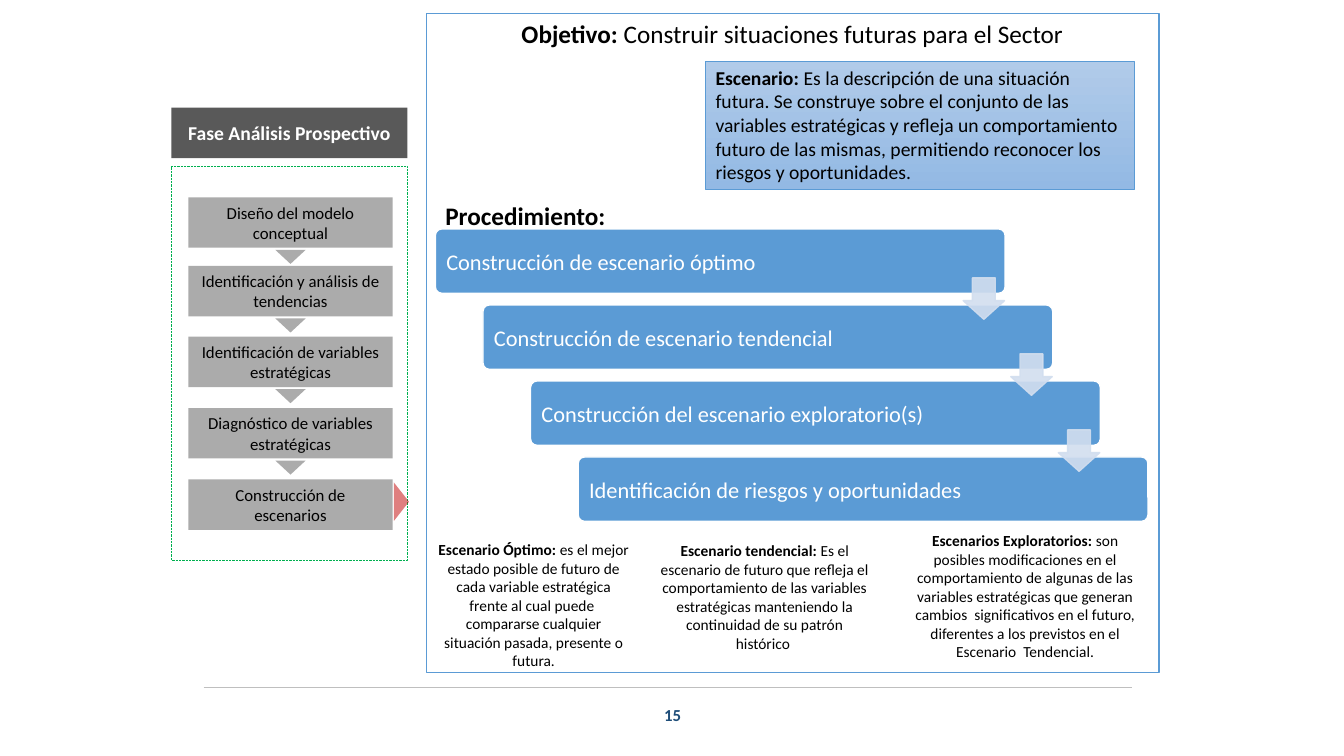
from dataclasses import dataclass

from lxml import etree
from pptx import Presentation
from pptx import util as u
from pptx.dml import color as colors
from pptx.enum import dml, shapes, text
from pptx.oxml import ns

# Content: each paragraph is a (bold, regular) pair
OBJECTIVE = ("Objetivo: ", "Construir situaciones futuras para el Sector")
PROCEDURE = ("Procedimiento:", "")
PHASE = ("Fase Análisis Prospectivo", "")
PHASE_STEPS = [  # label, top
    ("Diseño del modelo conceptual", 141),
    ("Identificación y análisis de tendencias", 190),
    ("Identificación de variables estratégicas", 240.5),
    ("Diagnóstico de variables estratégicas", 291.5),
    ("Construcción de escenarios", 342.5),
]
SCENARIO_STEPS = [
    "Construcción de escenario óptimo",
    "Construcción de escenario tendencial",
    "Construcción del escenario exploratorio(s)",
    "Identificación de riesgos y oportunidades",
]
DEFINITION = ("Escenario: ", "Es la descripción de una situación futura. Se construye sobre el "
              "conjunto de las variables estratégicas y refleja un comportamiento futuro de las "
              "mismas, permitiendo reconocer los riesgos y oportunidades.")
SCENARIO_TYPES = [  # position, paragraphs
    ((304.5, 382.5, 153.5, 101), [
        ("Escenario Óptimo: ", "es el mejor estado posible de futuro de cada variable "
         "estratégica frente al cual puede "),
        ("", "compararse cualquier situación pasada, presente o futura.")]),
    ((463, 383, 166.5, 87), [
        ("Escenario tendencial: ", "Es el escenario de futuro que refleja el comportamiento de "
         "las variables estratégicas manteniendo la continuidad de su patrón histórico ")]),
    ((644.5, 376, 175.5, 101), [
        ("Escenarios Exploratorios: ", "son posibles modiﬁcaciones en el comportamiento de "
         "algunas de las variables estratégicas que generan cambios  signiﬁcativos en el futuro, "
         "diferentes a los previstos en el Escenario  Tendencial.")]),
]
PAGE_NUMBER = ("15", "")


@dataclass(frozen=True)
class Theme:
    font: str = "Calibri"
    black: str = "000000"
    white: str = "FFFFFF"
    gray: str = "595959"
    red: str = "C00000"
    green: str = "00B050"
    blue: str = "5B9BD5"
    pale: str = "D2DEEF"
    navy: str = "1F4E79"
    rule: str = "BFBFBF"
    gradient: tuple = ("B1CBE9", "93B9E4")
    heading: int = 18
    step: int = 16
    body: int = 14
    label: int = 12
    note: int = 11


THEME = Theme()
LEFT, CENTER = text.PP_ALIGN.LEFT, text.PP_ALIGN.CENTER
TOP, MIDDLE = text.MSO_ANCHOR.TOP, text.MSO_ANCHOR.MIDDLE
KIND = shapes.MSO_SHAPE


def rgb(value):
    return colors.RGBColor.from_string(value)


def set_alpha(fill_element, percent):
    color_element = fill_element.find(".//" + ns.qn("a:srgbClr"))
    etree.SubElement(color_element, ns.qn("a:alpha")).set("val", str(percent * 1000))


def write(shape, paragraphs, size, color=THEME.black, align=CENTER, anchor=MIDDLE):
    frame = shape.text_frame
    frame.word_wrap = True
    frame.vertical_anchor = anchor
    for index, pieces in enumerate(paragraphs):
        paragraph = frame.add_paragraph() if index else frame.paragraphs[0]
        paragraph.alignment = align
        for piece, bold in zip(pieces, (True, False)):
            if piece:
                run = paragraph.add_run()
                run.text = piece
                font = run.font
                font.name, font.size, font.bold = THEME.font, u.Pt(size), bold
                font.color.rgb = rgb(color)
    return frame


def add_shape(slide, kind, box, fill=None, line=None, width=1, alpha=None):
    shape = slide.shapes.add_shape(kind, *map(u.Pt, box))
    shape.shadow.inherit = False
    if fill:
        shape.fill.solid()
        shape.fill.fore_color.rgb = rgb(fill)
        if alpha:
            set_alpha(shape._element.spPr.find(ns.qn("a:solidFill")), alpha)
    else:
        shape.fill.background()
    if line:
        shape.line.color.rgb = rgb(line)
        shape.line.width = u.Pt(width)
    else:
        shape.line.fill.background()
    return shape


def add_text(slide, box, paragraphs, size, **options):
    shape = slide.shapes.add_textbox(*map(u.Pt, box))
    return write(shape, paragraphs, size, **options)


def add_footer(slide):
    rule = slide.shapes.add_connector(shapes.MSO_CONNECTOR.STRAIGHT,
                                      u.Pt(145.5), u.Pt(491), u.Pt(808.5), u.Pt(491))
    rule.line.color.rgb = rgb(THEME.rule)
    rule.line.width = u.Pt(0.75)
    etree.SubElement(rule._element.spPr, ns.qn("a:effectLst"))
    add_text(slide, (396.5, 496, 168, 29), [PAGE_NUMBER], THEME.label,
             color=THEME.navy, anchor=MIDDLE)


def add_phase(slide):
    left, width = 122.5, 168.5
    header = add_shape(slide, KIND.RECTANGLE, (left, 77, width, 36), THEME.gray)
    write(header, [PHASE], THEME.body, THEME.white)
    frame = add_shape(slide, KIND.RECTANGLE, (left, 119, width, 281.5), None, THEME.green, 0.5)
    frame.line.dash_style = dml.MSO_LINE.ROUND_DOT

    box_left, box_width, box_height = 134.5, 146, 36
    marker_width, marker_height = 21.6, 10
    for index, (label, top) in enumerate(PHASE_STEPS):
        box = add_shape(slide, KIND.RECTANGLE, (box_left, top, box_width, box_height),
                        THEME.gray, alpha=50)
        write(box, [("", label)], THEME.label)
        if index < len(PHASE_STEPS) - 1:
            marker_left = box_left + (box_width - marker_width) / 2
            marker = add_shape(slide, KIND.ISOSCELES_TRIANGLE,
                               (marker_left, top + box_height + 1.5, marker_width, marker_height),
                               THEME.gray, alpha=50)
            marker.rotation = 180

    # Current step
    pointer = add_shape(slide, KIND.ISOSCELES_TRIANGLE, (273, 353, 27.5, 10.8),
                        THEME.red, alpha=50)
    pointer.rotation = 90


def add_staircase(slide):
    left, top, step_x, step_y = 311, 163.5, 34, 54.3
    for index, label in enumerate(SCENARIO_STEPS):
        bar = add_shape(slide, KIND.ROUNDED_RECTANGLE,
                        (left + index * step_x, top + index * step_y, 407, 46),
                        THEME.blue, THEME.white)
        bar.adjustments[0] = 0.1
        frame = write(bar, [("", label)], THEME.step, THEME.white, LEFT)
        frame.margin_left = u.Pt(6.5)
    for index in range(len(SCENARIO_STEPS) - 1):
        arrow = add_shape(slide, KIND.DOWN_ARROW,
                          (left + 377 + index * step_x, top + 35 + index * step_y, 29.6, 29.6),
                          THEME.pale, THEME.pale, alpha=90)
        arrow.adjustments[0], arrow.adjustments[1] = 0.55, 0.45
        set_alpha(arrow._element.spPr.find(ns.qn("a:ln")), 90)


def add_definition(slide):
    box = add_shape(slide, KIND.RECTANGLE, (504, 43.5, 306, 92), None, THEME.blue, 0.5)
    box.fill.gradient()
    box.fill.gradient_angle = 270
    for stop, color in zip(box.fill.gradient_stops, THEME.gradient):
        stop.color.rgb = rgb(color)
    write(box, [DEFINITION], THEME.body, align=LEFT, anchor=TOP)


def main():
    presentation = Presentation()
    presentation.slide_width, presentation.slide_height = u.Pt(960), u.Pt(540)
    slide = presentation.slides.add_slide(presentation.slide_layouts[5])

    # Title
    title = slide.shapes.title
    title.left, title.top, title.width, title.height = map(u.Pt, (312, 9.5, 508, 29))
    write(title, [OBJECTIVE], THEME.heading, anchor=TOP).auto_size = text.MSO_AUTO_SIZE.NONE

    add_footer(slide)
    add_phase(slide)

    # Procedure panel
    add_shape(slide, KIND.RECTANGLE, (304.5, 9.5, 523.5, 471), None, THEME.blue)
    add_staircase(slide)
    add_text(slide, (311, 139.5, 134, 29), [PROCEDURE], THEME.heading,
             align=LEFT, anchor=TOP).word_wrap = False
    add_definition(slide)
    for box, paragraphs in SCENARIO_TYPES:
        add_text(slide, box, paragraphs, THEME.note, anchor=TOP)

    presentation.save("out.pptx")


if __name__ == "__main__":
    main()
